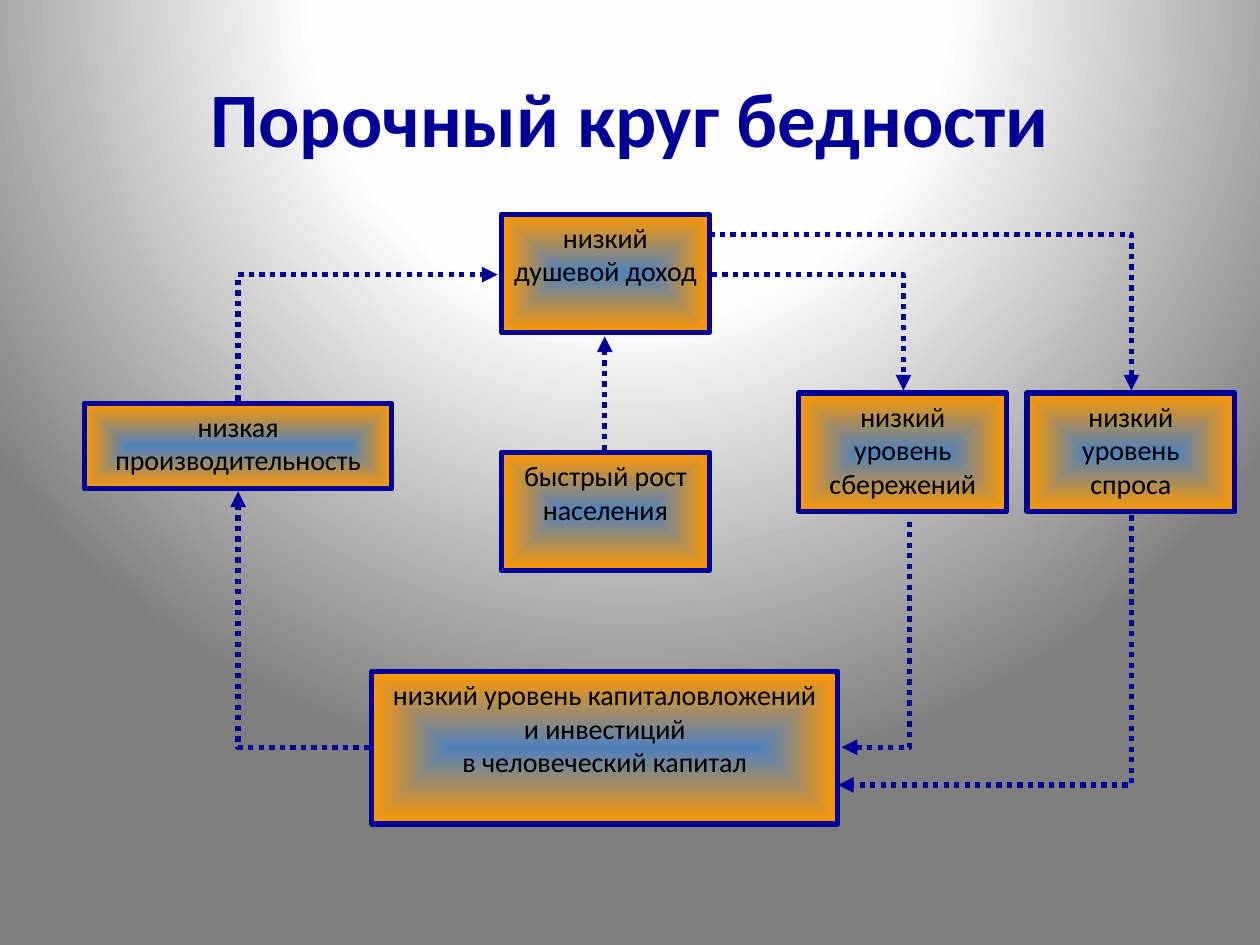
"""Build the slide on the vicious circle of poverty."""
from lxml.etree import SubElement
from pptx import Presentation
from pptx.dml.color import RGBColor
from pptx.enum.dml import MSO_LINE
from pptx.enum.shapes import MSO_CONNECTOR as CONN, MSO_SHAPE as SHAPE
from pptx.enum.text import MSO_ANCHOR as ANCHOR, PP_ALIGN as ALIGN
from pptx.oxml.ns import qn
from pptx.util import Inches, Pt

FONT = "Calibri"
COLORS = {
    "navy": "000099", "text": "000000", "blue": "4F81BD", "orange": "FF9900",
    "white": "FFFFFF", "light": "FEFEFE", "grey": "7F7F7F",
}
TITLE = "Порочный круг бедности"
BOXES = [
    (["низкий душевой доход"], 3.98, 1.7, 1.65, 0.94),
    (["низкий уровень сбережений"], 6.34, 3.12, 1.65, 0.94),
    (["низкий уровень спроса"], 8.15, 3.12, 1.65, 0.94),
    (["низкий уровень капиталовложений", "и инвестиций",
      "в человеческий капитал"], 2.95, 5.33, 3.7, 1.21),
    (["низкая производительность"], 0.67, 3.2, 2.44, 0.68),
    (["быстрый рост населения"], 3.98, 3.59, 1.65, 0.94),
]
ARROWS = [
    ((5.65, 2.18), (7.17, 3.1)),
    ((5.63, 1.86), (8.98, 3.1)),
    ((7.22, 4.14), (6.68, 5.93)),
    ((8.98, 4.09), (6.65, 6.23)),
    ((2.93, 5.93), (1.89, 3.9)),
    ((1.89, 3.18), (3.95, 2.18)),
    ((4.8, 3.57), (4.8, 2.67)),
]
BOX_STOPS = [(0, "blue"), (100, "orange")]
PAGE_STOPS = [(0, "white"), (40, "light"), (100, "grey")]
TURNS = {(True, True): 0, (False, True): 90, (False, False): 180, (True, False): 270}


def rgb(name):
    return RGBColor.from_string(COLORS[name])


def path_gradient(fill, owner, stops, kind, focus):
    fill.gradient()
    grad = next(owner.iter(qn("a:gradFill")))
    for child in list(grad):
        grad.remove(child)
    gs_list = SubElement(grad, qn("a:gsLst"))
    for pos, name in stops:
        gs = SubElement(gs_list, qn("a:gs"), pos=str(pos * 1000))
        SubElement(gs, qn("a:srgbClr"), val=COLORS[name])
    shade = SubElement(grad, qn("a:path"), {"path": kind})
    sides = {side: str(pct * 1000) for side, pct in zip("ltrb", focus)}
    SubElement(shade, qn("a:fillToRect"), sides)


def write(shape, lines, size, color, anchor, bold=False):
    tf = shape.text_frame
    tf.word_wrap = True
    tf.vertical_anchor = anchor
    for i, line in enumerate(lines):
        p = tf.add_paragraph() if i else tf.paragraphs[0]
        p.alignment = ALIGN.CENTER
        r = p.add_run()
        r.text = line
        r.font.name, r.font.size, r.font.bold = FONT, Pt(size), bold
        r.font.color.rgb = rgb(color)


def add_box(slide, lines, *place):
    sp = slide.shapes.add_shape(SHAPE.RECTANGLE, *map(Inches, place))
    sp.shadow.inherit = False
    path_gradient(sp.fill, sp._element.spPr, BOX_STOPS, "rect", (50, 50, 50, 50))
    sp.line.color.rgb = rgb("navy")
    sp.line.width = Pt(3)
    write(sp, lines, 16, "text", ANCHOR.TOP)


def add_bent(slide, start, end):
    (x1, y1), (x2, y2) = start, end
    turn = TURNS[x2 > x1, y2 > y1]
    w, h = abs(x2 - x1), abs(y2 - y1)
    if turn in (90, 270):
        w, h = h, w
    left, top = (x1 + x2 - w) / 2, (y1 + y2 - h) / 2
    cx = slide.shapes.add_connector(
        CONN.ELBOW, *map(Inches, (left, top, left + w, top + h)))
    sp_pr = cx._element.spPr
    sp_pr.find(qn("a:prstGeom")).set("prst", "bentConnector2")
    sp_pr.find(qn("a:xfrm")).set("rot", str(turn * 60000))
    return cx


def add_arrow(slide, start, end):
    if start[0] == end[0]:
        cx = slide.shapes.add_connector(CONN.STRAIGHT, *map(Inches, start + end))
    else:
        cx = add_bent(slide, start, end)
    cx.line.color.rgb = rgb("navy")
    cx.line.width = Pt(3)
    cx.line.dash_style = MSO_LINE.ROUND_DOT
    sp_pr = cx._element.spPr
    SubElement(sp_pr.find(qn("a:ln")), qn("a:tailEnd"), type="triangle")
    SubElement(sp_pr, qn("a:effectLst"))


def main():
    prs = Presentation()
    prs.slide_width, prs.slide_height = Inches(10), Inches(7.5)
    slide = prs.slides.add_slide(prs.slide_layouts[6])
    path_gradient(slide.background.fill, slide._element, PAGE_STOPS,
                  "circle", (50, -80, 50, 180))
    title = slide.shapes.add_textbox(*map(Inches, (0.5, 0.3, 9, 1.25)))
    write(title, [TITLE], 44, "navy", ANCHOR.MIDDLE, bold=True)
    for lines, *place in BOXES:
        add_box(slide, lines, *place)
    for start, end in ARROWS:
        add_arrow(slide, start, end)
    prs.save("out.pptx")


if __name__ == "__main__":
    main()
